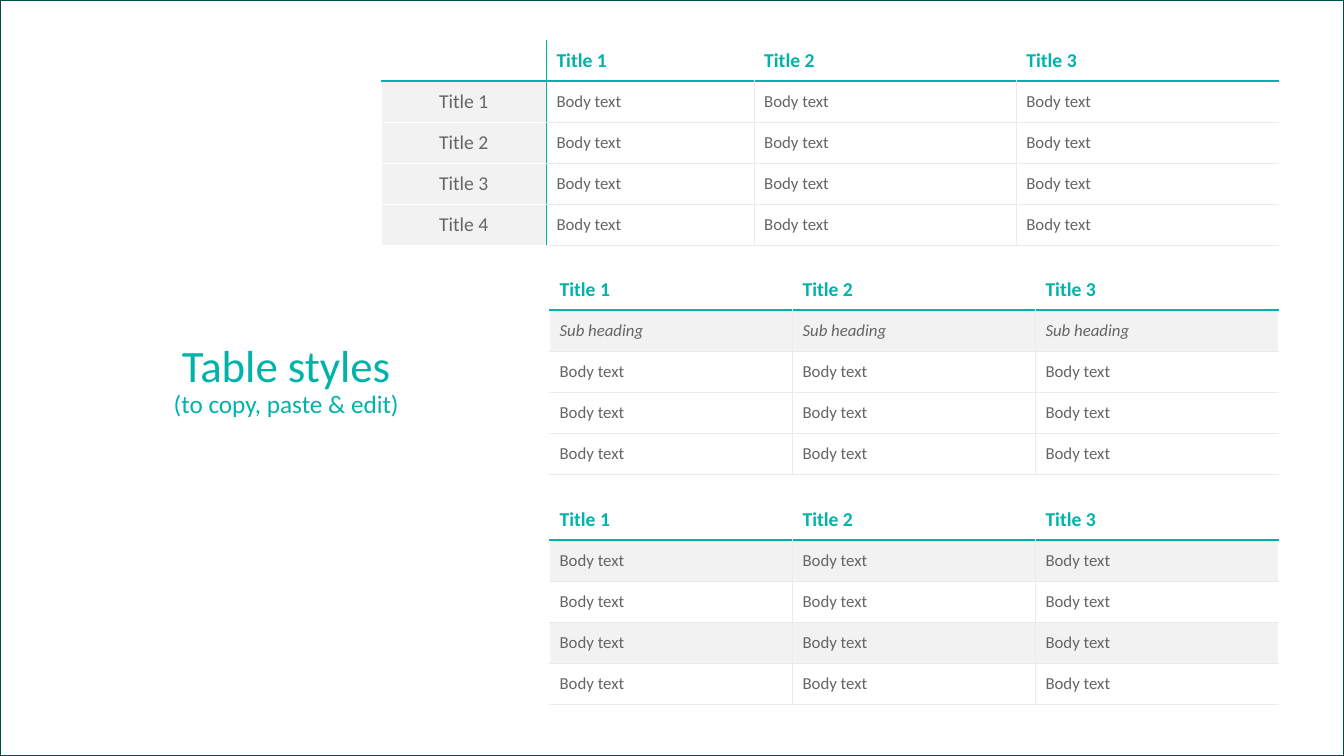
from dataclasses import dataclass

from lxml import etree
from pptx import Presentation, util as u
from pptx.dml.color import RGBColor
from pptx.enum import shapes, text
from pptx.oxml import ns


@dataclass(frozen=True)
class Theme:
    font: str = "Calibri"
    accent: str = "00B3AA"
    frame: str = "004E4B"
    ink: str = "656565"
    paper: str = "FFFFFF"
    shade: str = "F2F2F2"
    hairline: str = "EBEBEB"
    title_size: int = 32
    subtitle_size: int = 18
    heading_size: int = 14
    body_size: int = 12


class SlideBuilder:
    """Draws styled elements on the current slide."""

    def __init__(self, slide, theme):
        self.slide = slide
        self.theme = theme
        self.blank_edge = (theme.paper, 1)
        self.strong_edge = (theme.accent, 1.5)
        self.fine_edge = (theme.hairline, 0.5)

    def frame(self, width, height):
        shape = self.slide.shapes.add_shape(shapes.MSO_SHAPE.RECTANGLE, 0, 0, width, height)
        shape.shadow.inherit = False
        shape.fill.solid()
        shape.fill.fore_color.rgb = RGBColor.from_string(self.theme.paper)
        shape.line.color.rgb = RGBColor.from_string(self.theme.frame)
        shape.line.width = u.Pt(1)

    def title(self, heading, subtitle, left, top, width, height):
        shape = self.slide.shapes.title
        shape.element.getparent().append(shape.element)
        shape.left, shape.top = u.Inches(left), u.Inches(top)
        shape.width, shape.height = u.Inches(width), u.Inches(height)
        text_frame = shape.text_frame
        text_frame.word_wrap = True
        text_frame.auto_size = text.MSO_AUTO_SIZE.NONE
        text_frame.vertical_anchor = text.MSO_ANCHOR.TOP
        paragraph = text_frame.paragraphs[0]
        paragraph.alignment = text.PP_ALIGN.CENTER
        paragraph.line_spacing = 0.9
        paragraph.space_before = u.Pt(0)
        self.style_font(paragraph.font, self.theme.title_size, self.theme.accent)
        paragraph.add_run().text = heading
        paragraph.add_line_break()
        run = paragraph.add_run()
        run.text = subtitle
        run.font.size = u.Pt(self.theme.subtitle_size)

    def table(self, rows, left, top, widths, shaded_rows=(), italic_rows=(), stub=False):
        row_height = u.Inches(0.407)
        shape = self.slide.shapes.add_table(
            len(rows), len(widths), u.Inches(left), u.Inches(top),
            u.Inches(sum(widths)), row_height * len(rows))
        table = shape.table
        table.first_row = table.horz_banding = False
        for column, width in zip(table.columns, widths):
            column.width = u.Inches(width)
        for row_index, row in enumerate(rows):
            table.rows[row_index].height = row_height
            for column_index, wording in enumerate(row):
                cell = table.cell(row_index, column_index)
                is_stub = stub and column_index == 0
                is_header = row_index == 0
                self.cell_edges(cell, row_index, column_index, len(widths), stub)
                shaded = row_index in shaded_rows or (is_stub and not is_header)
                cell.fill.solid()
                cell.fill.fore_color.rgb = RGBColor.from_string(
                    self.theme.shade if shaded else self.theme.paper)
                cell.vertical_anchor = text.MSO_ANCHOR.MIDDLE
                cell.text = wording
                paragraph = cell.text_frame.paragraphs[0]
                if is_stub:
                    paragraph.alignment = text.PP_ALIGN.CENTER
                self.style_font(
                    paragraph.font,
                    self.theme.heading_size if is_header or is_stub else self.theme.body_size,
                    self.theme.accent if is_header else self.theme.ink,
                    bold=is_header, italic=row_index in italic_rows)

    def cell_edges(self, cell, row, column, column_count, stub):
        def vertical(index):
            if stub and index == 1:
                return self.strong_edge
            if row == 0 or index in (0, column_count):
                return self.blank_edge
            return self.fine_edge

        def horizontal(index):
            if index == 1:
                return self.strong_edge
            if index == 0 or (stub and column == 0):
                return self.blank_edge
            return self.fine_edge

        edges = {"a:lnL": vertical(column), "a:lnR": vertical(column + 1),
                 "a:lnT": horizontal(row), "a:lnB": horizontal(row + 1)}
        if stub and row == 1 and column == 0:
            edges["a:lnB"] = self.blank_edge
        properties = cell._tc.get_or_add_tcPr()
        for tag, (color, width) in edges.items():
            line = etree.SubElement(properties, ns.qn(tag), w=str(u.Pt(width)))
            fill = etree.SubElement(line, ns.qn("a:solidFill"))
            etree.SubElement(fill, ns.qn("a:srgbClr"), val=color)

    def style_font(self, font, size, color, bold=False, italic=False):
        font.name = self.theme.font
        font.size = u.Pt(size)
        font.bold = bold
        font.italic = italic
        font.color.rgb = RGBColor.from_string(color)


def main():
    presentation = Presentation()
    presentation.slide_width = u.Inches(13.33)
    presentation.slide_height = u.Inches(7.5)
    slide = presentation.slides.add_slide(presentation.slide_layouts[5])
    builder = SlideBuilder(slide, Theme())
    builder.frame(presentation.slide_width, presentation.slide_height)

    headings = ["Title 1", "Title 2", "Title 3"]
    body = ["Body text"] * 3
    stub_rows = [[f"Title {number}"] + body for number in range(1, 5)]
    even_widths = [2.41] * 3
    builder.table([[""] + headings] + stub_rows, 3.78, 0.4, [1.64, 2.06, 2.6, 2.6], stub=True)
    builder.table([headings, ["Sub heading"] * 3] + [body] * 3, 5.45, 2.67, even_widths,
                  shaded_rows=(1,), italic_rows=(1,))
    builder.table([headings] + [body] * 4, 5.45, 4.95, even_widths, shaded_rows=(1, 3))
    builder.title("Table styles", "(to copy, paste & edit)", 0.66, 3.36, 4.36, 1.07)
    presentation.save("out.pptx")


if __name__ == "__main__":
    main()
